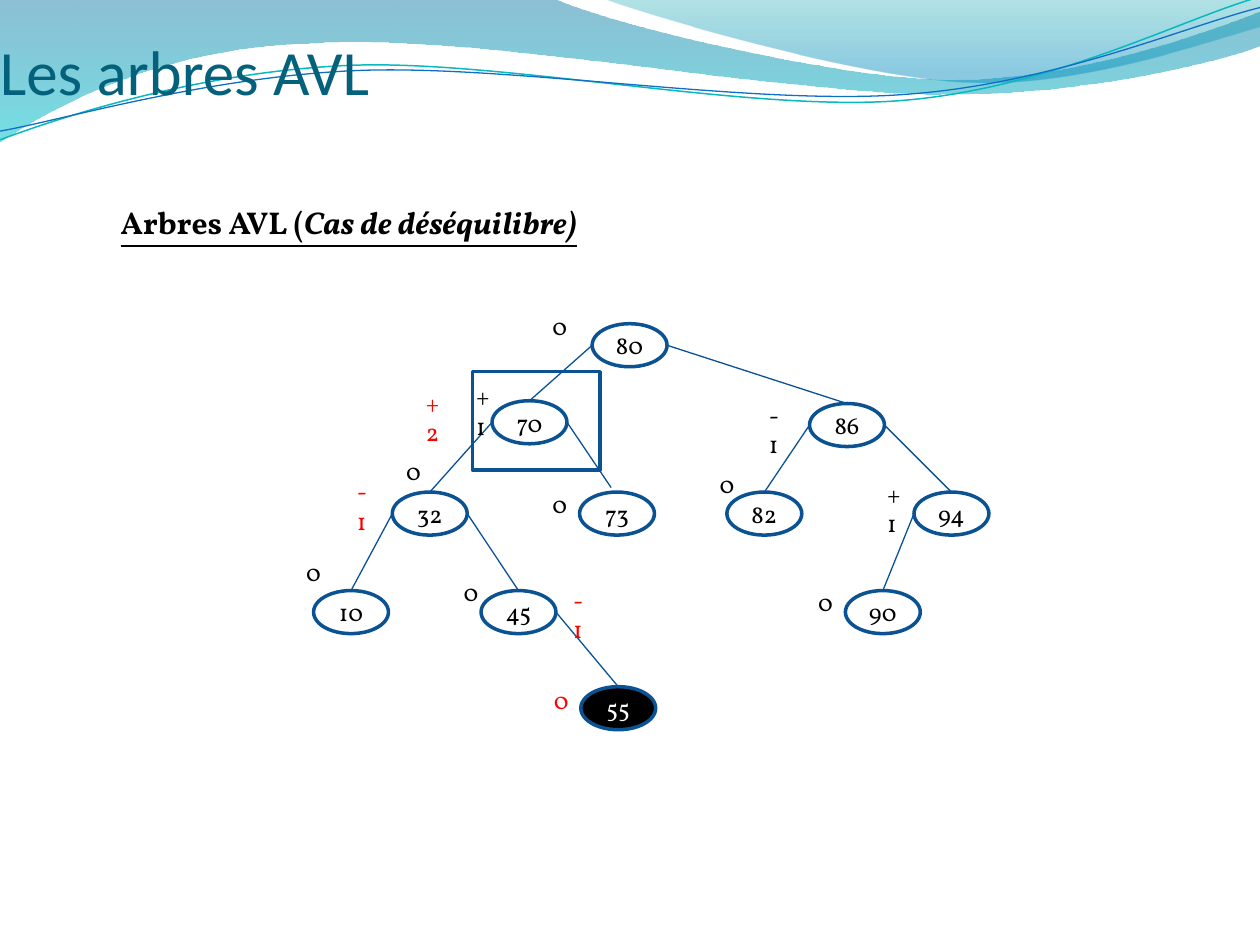
import pptx
import pptx.util
import pptx.dml.color
import pptx.enum.shapes
import pptx.enum.text
import pptx.oxml.ns
import lxml.etree

Pt = pptx.util.Pt
qn = pptx.oxml.ns.qn
SHAPES = pptx.enum.shapes.MSO_SHAPE
ANCHOR = pptx.enum.text.MSO_ANCHOR
ALIGN = pptx.enum.text.PP_ALIGN

THEME = {
    "ink": "000000", "paper": "FFFFFF", "alert": "FF0000", "title": "04617B",
    "outline": "0B5292", "edge": "095295",
    "title_font": {"name": "Calibri", "size": Pt(36)},
    "heading_font": {"name": "Vollkorn", "size": Pt(18), "bold": True, "underline": True},
    "tree_font": {"name": "Vollkorn", "size": Pt(14)},
}

WAVES = [
    {"start": (0, 0),
     "segments": [(316.8, -0.7), (342.7, 12.2, 478.1, 45.4, 545.8, 45.4),
                  (614.2, 45.4, 689.8, 18.7, 720, 6.5), (720.7, 25.9),
                  (707.8, 31.7, 626.4, 54.7, 537.1, 54),
                  (447.8, 54, 275, 20.2, 185, 24.5),
                  (92.9, 25.9, 33.1, 59.8, -0.7, 81.4), (0, 0)],
     "gradient": [(0, "0074A1", 45), (1, "00C6CF", 55)]},
    {"start": (344.9, -0.7),
     "segments": [(366.5, 7.9, 491, 44.6, 553.7, 46.8),
                  (616.3, 49.7, 691.9, 23, 720, 15.1), (720, 0), (344.9, -0.7)],
     "gradient": [(0, "00A1A9", 30), (0.8, "008BBF", 45)]},
    {"start": (0, 79.9),
     "segments": [(34.6, 67, 113.8, 41, 199.4, 37.4),
                  (284.4, 33.8, 427, 64.1, 513.4, 57.6),
                  (599.8, 51.1, 675.4, 10.8, 718.6, -1.4)],
     "stroke": ("0AB8BF", 0.85)},
    {"start": (0, 74.9),
     "segments": [(33.8, 69.1, 118.1, 43.9, 203.8, 40.3),
                  (290.2, 36.7, 429.8, 60.5, 516.2, 54),
                  (601.9, 48.2, 676.8, 15.1, 720, 4.3)],
     "stroke": ("0F6FC6", 0.75)},
]

TITLE = "Les arbres AVL"
HEADING = [("Arbres AVL (", False), ("Cas de déséquilibre)", True)]
UNBALANCED_AREA = (270, 212.4, 73, 56.2)
NODE_SIZE = (42.8, 24.6)
NODES = {
    "80": (338.4, 185), "70": (281.2, 229), "32": (224.2, 281.2),
    "73": (331.2, 281.2), "45": (274.9, 337.5), "86": (462.6, 230.6),
    "10": (179.2, 337.5), "82": (415.4, 281.2), "94": (522.3, 281.2),
    "90": (483.1, 337.5), "55": (331.9, 392.4),
}
INSERTED = "55"
CHILDREN = {
    "80": ("70", "86"), "70": ("32", "73"), "32": ("10", "45"),
    "86": ("82", "94"), "94": ("90", None), "45": (None, "55"),
}
LOOSE_ENDS = {"73": (349.2, 278.6)}
BALANCE_WIDTHS = {"0": 22.3, "+1": 26.6, "-1": 23.8, "+2": 29}
BALANCES = {
    "ink": [("0", 308.6, 174.2), ("+1", 265, 214.4), ("0", 167.8, 315),
            ("0", 257.8, 326.2), ("0", 308.6, 275.8), ("0", 404.2, 264.4),
            ("+1", 499.9, 270), ("-1", 432.3, 225), ("0", 225, 257.2),
            ("0", 460.4, 331.9)],
    "alert": [("-1", 320.4, 330.5), ("-1", 196.8, 268.6),
              ("+2", 236.2, 218.2), ("0", 309.4, 388.1)],
}


def rgb(value):
    return pptx.dml.color.RGBColor.from_string(value)


def apply(target, values):
    for key, value in values.items():
        setattr(target, key, value)


def stroke(line, color, width):
    line.color.rgb = rgb(color)
    line.width = Pt(width)


def add_box(slide, preset, box, fill):
    shape = slide.shapes.add_shape(preset, *map(Pt, box))
    shape.shadow.inherit = False
    shape.fill.solid()
    shape.fill.fore_color.rgb = rgb(fill)
    stroke(shape.line, THEME["outline"], 2)
    return shape


def write(paragraph, text, font, color, **extra):
    run = paragraph.add_run()
    run.text = text
    apply(run.font, {**font, **extra})
    run.font.color.rgb = rgb(color)


def add_text(slide, box, **frame_format):
    frame = slide.shapes.add_textbox(*map(Pt, box)).text_frame
    apply(frame, {"word_wrap": True, **frame_format})
    return frame.paragraphs[0]


def bend(shape, segments):
    steps = iter(list(shape._element.spPr.iter(qn("a:lnTo"))))
    for segment in segments:
        first = next(steps)
        if len(segment) == 6:
            first.tag = qn("a:cubicBezTo")
            for _ in range(2):
                control = next(steps)
                first.append(control[0])
                control.getparent().remove(control)


def add_wave(slide, wave):
    segments = wave["segments"]
    points = [(Pt(segment[i]), Pt(segment[i + 1]))
              for segment in segments for i in range(0, len(segment), 2)]
    builder = slide.shapes.build_freeform(*map(Pt, wave["start"]), scale=1.0)
    builder.add_line_segments(points, close="gradient" in wave)
    shape = builder.convert_to_shape()
    bend(shape, segments)
    shape.shadow.inherit = False
    if "stroke" in wave:
        shape.fill.background()
        stroke(shape.line, *wave["stroke"])
        return
    shape.line.fill.background()
    shape.fill.gradient()
    shape.fill.gradient_angle = 270
    for stop, (position, color, _) in zip(shape.fill.gradient_stops, wave["gradient"]):
        stop.position = position
        stop.color.rgb = rgb(color)
    colors = shape._element.spPr.iter(qn("a:srgbClr"))
    for element, (_, _, opacity) in zip(colors, wave["gradient"]):
        lxml.etree.SubElement(element, qn("a:alpha")).set("val", str(opacity * 1000))


def add_node(slide, key):
    fill, ink = ("ink", "paper") if key == INSERTED else ("paper", "ink")
    node = add_box(slide, SHAPES.OVAL, NODES[key] + NODE_SIZE, THEME[fill])
    apply(node.text_frame, {"word_wrap": False, "vertical_anchor": ANCHOR.MIDDLE})
    paragraph = node.text_frame.paragraphs[0]
    paragraph.alignment = ALIGN.CENTER
    write(paragraph, key, THEME["tree_font"], THEME[ink])
    return node


def add_edge(slide, nodes, parent, child, on_right):
    start = nodes[parent]
    x = start.left + start.width * on_right
    y = start.top + start.height // 2
    end = map(Pt, LOOSE_ENDS.get(child, (0, 0)))
    edge = slide.shapes.add_connector(
        pptx.enum.shapes.MSO_CONNECTOR.STRAIGHT, x, y, *end)
    if child not in LOOSE_ENDS:
        edge.end_connect(nodes[child], 0)
    stroke(edge.line, THEME["edge"], 0.75)
    lxml.etree.SubElement(edge._element.spPr, qn("a:effectLst"))


def main():
    deck = pptx.Presentation()
    apply(deck, {"slide_width": Pt(720), "slide_height": Pt(540)})
    slide = deck.slides.add_slide(deck.slide_layouts[6])
    for wave in WAVES:
        add_wave(slide, wave)

    add_box(slide, SHAPES.RECTANGLE, UNBALANCED_AREA, THEME["paper"])
    nodes = {key: add_node(slide, key) for key in NODES}
    for parent, children in CHILDREN.items():
        for on_right, child in enumerate(children):
            if child:
                add_edge(slide, nodes, parent, child, on_right)
    for color, balances in BALANCES.items():
        for text, left, top in balances:
            paragraph = add_text(slide, (left, top, BALANCE_WIDTHS[text], 24.2))
            write(paragraph, text, THEME["tree_font"], THEME[color])

    title = add_text(slide, (0, 0, 720, 61.9), vertical_anchor=ANCHOR.BOTTOM,
                     margin_left=0, margin_right=0, margin_top=Pt(3.6), margin_bottom=0)
    write(title, TITLE, THEME["title_font"], THEME["title"])
    heading = add_text(slide, (61.9, 112.5, 483.8, 29))
    for text, italic in HEADING:
        write(heading, text, THEME["heading_font"], THEME["ink"], italic=italic)
    deck.save("out.pptx")


if __name__ == "__main__":
    main()
